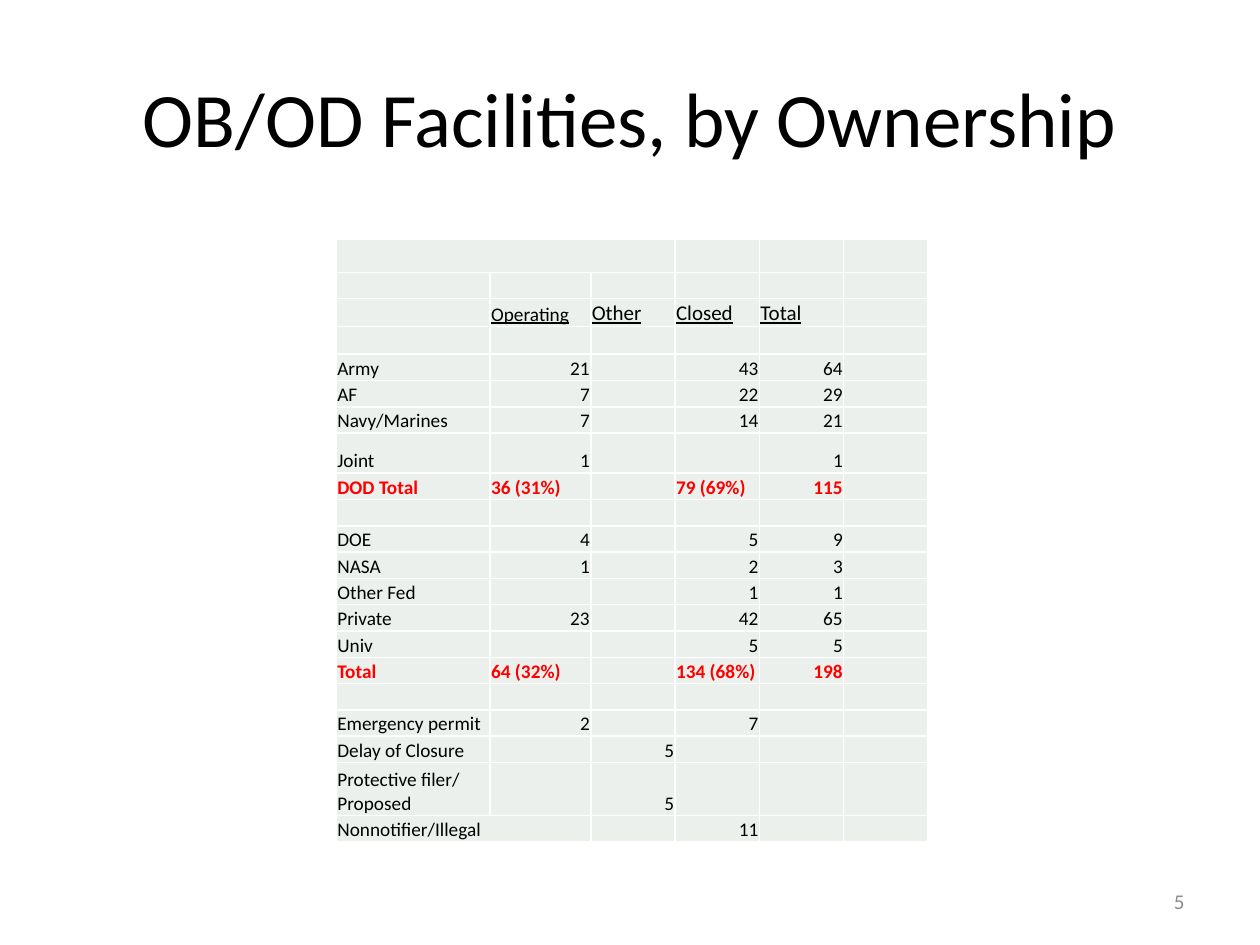
from lxml import etree
from pptx import Presentation
from pptx import util as u
from pptx.dml.color import RGBColor
from pptx.enum import text
from pptx.oxml import ns

COLOURS = {"ink": "000000", "total": "FF0000", "cell": "EBF0EC", "border": "FFFFFF", "number": "8C8C8C"}
COLUMN_WIDTHS = [3.1, 2.03] + [1.7] * 4
ROW_HEIGHT = 0.53
SPECIAL_HEIGHTS = {0: 0.66, 2: 0.56, 3: 0.56, 7: 0.81, 19: 1.07}
HEADER_ROW = 2
ROWS = [
    [],
    [],
    ["", "Operating", "Other", "Closed", "Total"],
    [],
    ["Army", "21", "", "43", "64"],
    ["AF", "7", "", "22", "29"],
    ["Navy/Marines", "7", "", "14", "21"],
    ["Joint", "1", "", "", "1"],
    ["DOD Total", "36 (31%)", "", "79 (69%)", "115"],
    [],
    ["DOE", "4", "", "5", "9"],
    ["NASA", "1", "", "2", "3"],
    ["Other Fed", "", "", "1", "1"],
    ["Private", "23", "", "42", "65"],
    ["Univ", "", "", "5", "5"],
    ["Total", "64 (32%)", "", "134 (68%)", "198"],
    [],
    ["Emergency permit", "2", "", "7"],
    ["Delay of Closure", "", "5"],
    ["Protective filer/ Proposed", "", "5"],
    ["Nonnotifier/Illegal", "", "", "11"],
]


def set_all(target, values):
    """Set every attribute of the target from a dict."""
    for name, value in values.items():
        setattr(target, name, value)


def write(para, words, size, colour, align, **font):
    """Write one formatted span into a paragraph."""
    para.alignment = align
    span = para.add_run()
    span.text = words
    set_all(span.font, {"name": "Calibri", "size": u.Pt(size), **font})
    span.font.color.rgb = RGBColor.from_string(COLOURS[colour])


def add_borders(cell):
    """Give a cell a thin line on all four sides."""
    properties = cell._tc.get_or_add_tcPr()
    for side in ("lnL", "lnR", "lnT", "lnB"):
        line = etree.SubElement(properties, ns.qn(f"a:{side}"), w=str(u.Pt(1)))
        fill = etree.SubElement(line, ns.qn("a:solidFill"))
        etree.SubElement(fill, ns.qn("a:srgbClr"), val=COLOURS["border"])


def format_cell(cell):
    """Set the borders, fill, margins and anchor of a cell."""
    add_borders(cell)
    cell.fill.solid()
    cell.fill.fore_color.rgb = RGBColor.from_string(COLOURS["cell"])
    set_all(cell, {
        "margin_left": u.Cm(0.02), "margin_right": u.Cm(0.02), "margin_top": u.Cm(0.02),
        "margin_bottom": 0, "vertical_anchor": text.MSO_ANCHOR.BOTTOM,
    })


def fill_cell(cell, words, row, column):
    """Write a cell's words in the style of its row."""
    para = cell.text_frame.paragraphs[0]
    if not words:
        para._p.get_or_add_endParaRPr().set("sz", "1100")
        return
    header = row == HEADER_ROW
    total = ROWS[row][0].endswith("Total")
    align = text.PP_ALIGN.RIGHT if words.isdigit() else text.PP_ALIGN.LEFT
    write(para, words, 12 if header and column > 1 else 11, "total" if total else "ink",
          align, bold=total, underline=header)


def add_facility_table(page):
    """Add the table of facilities by owner."""
    heights = [SPECIAL_HEIGHTS.get(row, ROW_HEIGHT) for row in range(len(ROWS))]
    frame = page.shapes.add_table(len(ROWS), len(COLUMN_WIDTHS), u.Cm(6.78), u.Cm(4.83),
                                  u.Cm(sum(COLUMN_WIDTHS)), u.Cm(sum(heights)))
    table = frame.table
    set_all(table, {"first_row": False, "horz_banding": False})
    for column, width in zip(table.columns, COLUMN_WIDTHS):
        column.width = u.Cm(width)
    for row, height in enumerate(heights):
        table.rows[row].height = u.Cm(height)
        for column in range(len(COLUMN_WIDTHS)):
            cell = table.cell(row, column)
            format_cell(cell)
            words = ROWS[row][column] if column < len(ROWS[row]) else ""
            fill_cell(cell, words, row, column)
    table.cell(0, 0).merge(table.cell(0, 2))
    table.cell(len(ROWS) - 1, 0).merge(table.cell(len(ROWS) - 1, 1))


def add_title(page, words):
    """Place and write the title."""
    title = page.shapes.title
    set_all(title, {"left": u.Cm(1.27), "top": u.Cm(0.76), "width": u.Cm(22.86), "height": u.Cm(3.18)})
    title.text_frame.vertical_anchor = text.MSO_ANCHOR.MIDDLE
    write(title.text_frame.paragraphs[0], words, 44, "ink", text.PP_ALIGN.CENTER)


def add_page_number(page, words):
    """Add the page number at the lower right."""
    box = page.shapes.add_textbox(u.Cm(18.2), u.Cm(17.65), u.Cm(5.93), u.Cm(1.02))
    set_all(box.text_frame, {"word_wrap": True, "vertical_anchor": text.MSO_ANCHOR.MIDDLE})
    write(box.text_frame.paragraphs[0], words, 12, "number", text.PP_ALIGN.RIGHT)


def main():
    """Build and save the deck."""
    deck = Presentation()
    set_all(deck, {"slide_width": u.Cm(25.4), "slide_height": u.Cm(19.05)})
    page = deck.slides.add_slide(deck.slide_layouts[5])
    add_title(page, "OB/OD Facilities, by Ownership")
    add_facility_table(page)
    add_page_number(page, "5")
    deck.save("out.pptx")


if __name__ == "__main__":
    main()
